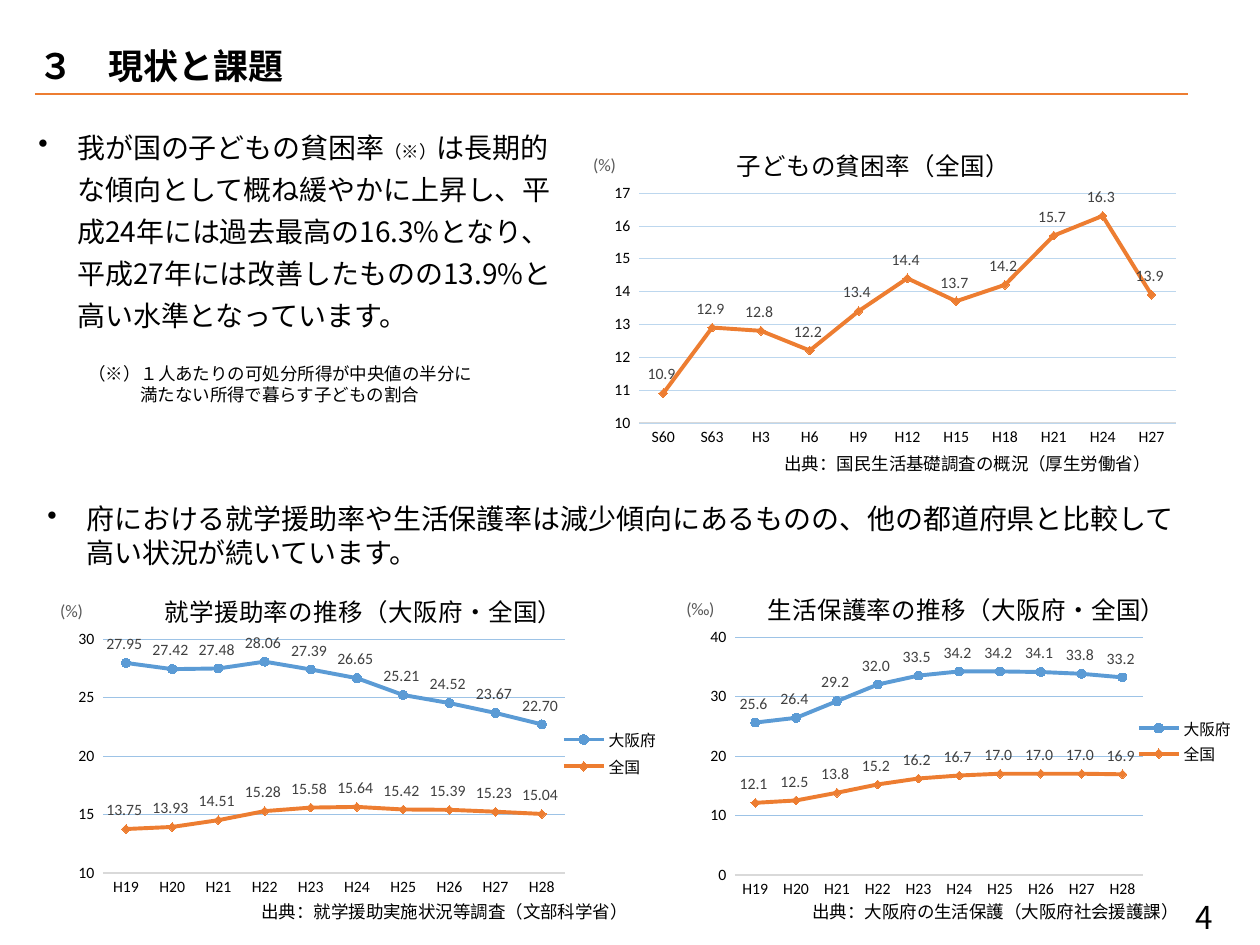
"""Build the slide on child poverty, school aid and public assistance rates."""
from dataclasses import dataclass
from typing import Any, NamedTuple, Optional

from lxml import etree
from pptx import Presentation
from pptx.chart.data import CategoryChartData
from pptx.dml.color import RGBColor
from pptx.enum.chart import (XL_CHART_TYPE, XL_LABEL_POSITION, XL_LEGEND_POSITION,
                             XL_MARKER_STYLE, XL_TICK_MARK)
from pptx.enum.dml import MSO_LINE
from pptx.enum.shapes import MSO_CONNECTOR
from pptx.oxml.ns import qn
from pptx.util import Emu, Pt

LINE_MARKERS = XL_CHART_TYPE.LINE_MARKERS
ABOVE = XL_LABEL_POSITION.ABOVE
RIGHT = XL_LEGEND_POSITION.RIGHT
CIRCLE, DIAMOND = XL_MARKER_STYLE.CIRCLE, XL_MARKER_STYLE.DIAMOND
NO_TICK = XL_TICK_MARK.NONE
DOTTED = MSO_LINE.ROUND_DOT
STRAIGHT = MSO_CONNECTOR.STRAIGHT
PX_PER_INCH = 126


@dataclass(frozen=True)
class Theme:
    """Colours, fonts and type sizes of the slide."""
    black: str = "000000"
    label: str = "404040"
    unit: str = "595959"
    orange: str = "ED7D31"
    blue: str = "5B9BD5"
    axis: str = "D9D9D9"
    pale_grid: str = "BDD7EE"
    grid: str = "9DC3E6"
    latin: str = "Calibri"
    japanese: str = "Noto Sans CJK JP"
    heading: int = 20
    page: int = 18
    body: int = 16
    chart_title: int = 14
    note: int = 10
    tick: int = 9


THEME = Theme()


class Box(NamedTuple):
    """A rectangle in px."""
    left: int
    top: int
    width: int
    height: int


class Span(NamedTuple):
    """A stretch of text in one size."""
    words: str
    size: int


class Paragraph(NamedTuple):
    """Spans with an indent in px and an optional bullet and line pitch."""
    spans: list[Span]
    indent: int = 0
    bullet: bool = False
    pitch: Optional[float] = None


class TextBlock(NamedTuple):
    """A text box with its paragraphs."""
    box: Box
    paragraphs: list[Paragraph]
    font: str = THEME.latin
    bold: bool = False
    wrap: bool = True


class Series(NamedTuple):
    """One line of a chart."""
    region: str
    rates: list[float]
    color: str
    marker: Any


class RateChart(NamedTuple):
    """A line chart with its placed parts."""
    box: Box
    plot: Box
    title: str
    title_at: tuple[int, int]
    unit: str
    unit_at: tuple[int, int]
    years: list[str]
    series: list[Series]
    scale: dict[str, int]
    grid: str
    label_format: str
    legend: Optional[Box] = None


def px(length: float) -> Emu:
    """Turn px into EMU."""
    return Emu(round(length * 914400 / PX_PER_INCH))


def apply(target: Any, values: dict[str, Any]) -> None:
    """Set each attribute named in values."""
    for key, value in values.items():
        setattr(target, key, value)


def style_font(font: Any, size: int, color: str, name: str = THEME.latin, bold: bool = False) -> None:
    """Set size, colour, face and weight."""
    apply(font, {"size": Pt(size), "name": name, "bold": bold})
    font.color.rgb = RGBColor.from_string(color)


def style_line(line: Any, color: str, width: float) -> None:
    """Set colour and width of a line."""
    line.color.rgb = RGBColor.from_string(color)
    line.width = Pt(width)


def draw_text(slide: Any, block: TextBlock) -> None:
    """Draw one text box."""
    frame = slide.shapes.add_textbox(*map(px, block.box)).text_frame
    frame.word_wrap = block.wrap
    for index, item in enumerate(block.paragraphs):
        paragraph = frame.add_paragraph() if index else frame.paragraphs[0]
        if item.pitch:
            paragraph.line_spacing = Pt(item.pitch)
        properties = paragraph._p.get_or_add_pPr()
        if item.indent:
            properties.set("marL", str(px(item.indent)))
        if item.bullet:
            properties.set("indent", str(px(-item.indent)))
            etree.SubElement(properties, qn("a:buChar"), char="•")
        for span in item.spans:
            run = paragraph.add_run()
            run.text = span.words
            style_font(run.font, span.size, THEME.black, block.font, block.bold)
            face = etree.Element(qn("a:ea"), typeface=THEME.japanese)
            run._r.rPr.find(qn("a:latin")).addnext(face)


def place(part: Any, index: int, frame: Box, **values: Any) -> None:
    """Give a chart part a manual layout inside the chart frame."""
    for old in part.findall(qn("c:layout")):
        part.remove(old)
    layout = etree.Element(qn("c:layout"))
    manual = etree.SubElement(layout, qn("c:manualLayout"))
    for key, value in {"xMode": "edge", "yMode": "edge", **values}.items():
        if key in ("x", "y"):
            value -= frame.left if key == "x" else frame.top
        if key in ("x", "w"):
            value = round(value / frame.width, 4)
        elif key in ("y", "h"):
            value = round(value / frame.height, 4)
        etree.SubElement(manual, qn(f"c:{key}"), val=str(value))
    part.insert(index, layout)


def place_title(title: Any, words: str, at: tuple[int, int], frame: Box, size: int, color: str) -> None:
    """Write a chart or axis title and place it level."""
    title.text_frame.text = words
    style_font(title.text_frame.paragraphs[0].runs[0].font, size, color)
    title.text_frame._txBody.bodyPr.set("rot", "0")
    place(title._element, 1, frame, x=at[0], y=at[1])


def draw_chart(slide: Any, rate: RateChart) -> None:
    """Draw one rate chart."""
    data = CategoryChartData()
    data.categories = rate.years
    for series in rate.series:
        data.add_series(series.region, series.rates)
    chart = slide.shapes.add_chart(LINE_MARKERS, *map(px, rate.box), data).chart
    style_font(chart.font, THEME.note, THEME.black)
    clear = etree.Element(qn("c:spPr"))
    etree.SubElement(clear, qn("a:noFill"))
    etree.SubElement(etree.SubElement(clear, qn("a:ln")), qn("a:noFill"))
    chart._chartSpace.find(qn("c:txPr")).addprevious(clear)
    place_title(chart.chart_title, rate.title, rate.title_at, rate.box, THEME.chart_title, THEME.black)
    years, rates = chart.category_axis, chart.value_axis
    for axis in (years, rates):
        apply(axis, {"major_tick_mark": NO_TICK, "minor_tick_mark": NO_TICK})
        style_font(axis.tick_labels.font, THEME.tick, THEME.black)
    style_line(years.format.line, THEME.axis, 0.75)
    apply(rates, rate.scale)
    apply(rates.tick_labels, {"number_format": "0_ ", "number_format_is_linked": False})
    rates.format.line.fill.background()
    style_line(rates.major_gridlines.format.line, rate.grid, 0.25)
    rates.major_gridlines.format.line.dash_style = DOTTED
    place_title(rates.axis_title, rate.unit, rate.unit_at, rate.box, THEME.note, THEME.unit)
    plot = rate.plot
    place(chart._chartSpace.chart.plotArea, 0, rate.box, x=plot.left, y=plot.top, w=plot.width, h=plot.height)
    manual = chart._chartSpace.chart.plotArea[0][0]
    manual.insert(0, etree.Element(qn("c:layoutTarget"), val="inner"))
    chart.has_legend = rate.legend is not None
    if rate.legend:
        apply(chart.legend, {"position": RIGHT, "include_in_layout": False})
        style_font(chart.legend.font, THEME.tick, THEME.black)
        key = rate.legend
        place(chart.legend._element, 1, rate.box, x=key.left, y=key.top, w=key.width, h=key.height)
    chart.plots[0].vary_by_categories = False
    for series, drawn in zip(rate.series, chart.plots[0].series):
        drawn.smooth = False
        style_line(drawn.format.line, series.color, 2.25)
        apply(drawn.marker, {"style": series.marker, "size": 5})
        drawn.marker.format.fill.solid()
        drawn.marker.format.fill.fore_color.rgb = RGBColor.from_string(series.color)
        style_line(drawn.marker.format.line, series.color, 0.75)
        apply(drawn.data_labels, {"show_value": True, "position": ABOVE, "number_format": rate.label_format,
                                  "number_format_is_linked": False})
        style_font(drawn.data_labels.font, THEME.tick, THEME.label)


def line_of(words: str, size: int, **options: Any) -> Paragraph:
    """Make a paragraph of one span."""
    return Paragraph([Span(words, size)], **options)


HEISEI = [f"H{year}" for year in range(19, 29)]
OSAKA, NATION = ("大阪府", THEME.blue, CIRCLE), ("全国", THEME.orange, DIAMOND)


def rates_of(region: tuple[str, str, Any], rates: list[float]) -> Series:
    """Make the line of a region."""
    return Series(region[0], rates, *region[1:])


CHARTS = [
    RateChart(Box(551, 115, 638, 339), Box(639, 193, 537, 230), "子どもの貧困率（全国）", (732, 139),
              "(%)", (590, 150), ["S60", "S63"] + [f"H{year}" for year in range(3, 28, 3)],
              [rates_of(NATION, [10.9, 12.9, 12.8, 12.2, 13.4, 14.4, 13.7, 14.2, 15.7, 16.3, 13.9])],
              {"minimum_scale": 10, "maximum_scale": 17, "major_unit": 1}, THEME.pale_grid, "0.0_ "),
    RateChart(Box(14, 559, 677, 344), Box(103, 639, 462, 234), "就学援助率の推移（大阪府・全国）", (160, 585),
              "(%)", (57, 596), HEISEI,
              [rates_of(OSAKA, [27.95, 27.42, 27.48, 28.06, 27.39, 26.65, 25.21, 24.52, 23.67, 22.7]),
               rates_of(NATION, [13.75, 13.93, 14.51, 15.28, 15.58, 15.64, 15.42, 15.39, 15.23, 15.04])],
              {"minimum_scale": 10, "maximum_scale": 30, "major_unit": 5}, THEME.grid, "0.00_ ",
              Box(560, 724, 100, 58)),
    RateChart(Box(641, 558, 626, 348), Box(735, 637, 408, 238), "生活保護率の推移（大阪府・全国）", (763, 583),
              "(‰)", (683, 594), HEISEI,
              [rates_of(OSAKA, [25.6, 26.4, 29.2, 32, 33.5, 34.2, 34.2, 34.1, 33.8, 33.2]),
               rates_of(NATION, [12.1, 12.5, 13.8, 15.2, 16.2, 16.7, 17, 17, 17, 16.9])],
              {"minimum_scale": 0, "maximum_scale": 40, "major_unit": 10}, THEME.grid, "0.0_ ",
              Box(1135, 714, 100, 54)),
]
TEXTS = [
    TextBlock(Box(26, 38, 1094, 55), [line_of("３　現状と課題", THEME.heading)], THEME.japanese, True),
    TextBlock(Box(26, 116, 543, 219), [Paragraph([
        Span("我が国の子どもの貧困率", THEME.body), Span("（※）", THEME.note),
        Span("は長期的な傾向として概ね緩やかに上昇し、平成24年には過去最高の16.3%となり、"
             "平成27年には改善したものの13.9%と高い水準となっています。", THEME.body)], 39, True, 24)],
        THEME.japanese),
    TextBlock(Box(35, 495, 1169, 81), [line_of(
        "府における就学援助率や生活保護率は減少傾向にあるものの、他の都道府県と比較して高い状況が続いています。",
        THEME.body, indent=39, bullet=True, pitch=19.5)], THEME.japanese),
    TextBlock(Box(76, 357, 427, 52), [
        line_of("（※）１人あたりの可処分所得が中央値の半分に", THEME.note),
        line_of("満たない所得で暮らす子どもの割合", THEME.note, indent=52)]),
    TextBlock(Box(1183, 892, 64, 50), [line_of("4", THEME.page)], THEME.japanese, wrap=False),
    TextBlock(Box(772, 447, 403, 34), [line_of("出典：国民生活基礎調査の概況（厚生労働省）", THEME.note)]),
    TextBlock(Box(249, 895, 422, 34), [line_of("出典：就学援助実施状況等調査（文部科学省）", THEME.note)]),
    TextBlock(Box(800, 895, 422, 34), [line_of("出典：大阪府の生活保護（大阪府社会援護課）", THEME.note)]),
]


def main() -> None:
    """Build and save the slide."""
    deck = Presentation()
    apply(deck, {"slide_width": px(1260), "slide_height": px(945)})
    slide = deck.slides.add_slide(deck.slide_layouts[6])
    rule = slide.shapes.add_connector(STRAIGHT, *map(px, (35, 94, 1188, 94)))
    style_line(rule.line, THEME.orange, 1.5)
    etree.SubElement(rule._element.spPr, qn("a:effectLst"))
    for rate in CHARTS:
        draw_chart(slide, rate)
    for block in TEXTS:
        draw_text(slide, block)
    deck.save("out.pptx")


if __name__ == "__main__":
    main()
